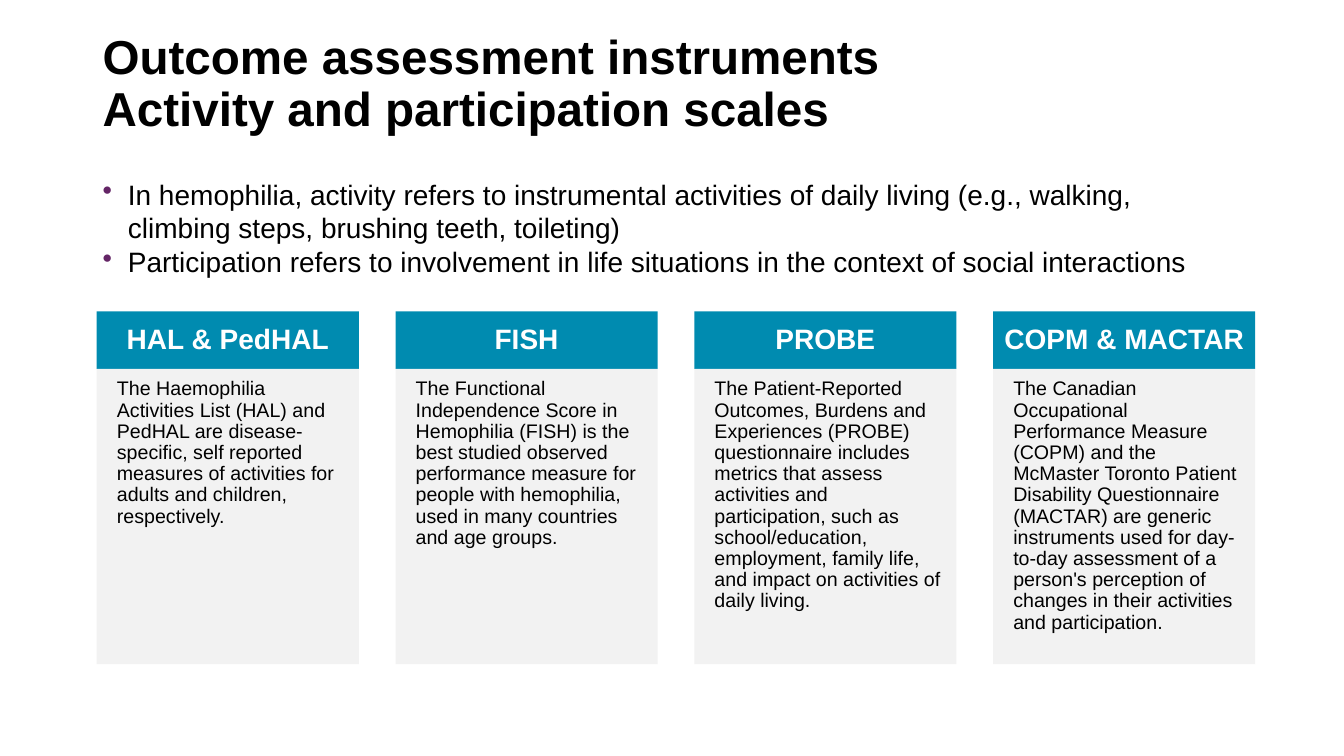
from pptx import Presentation
from pptx.dml.color import RGBColor
from pptx.enum.shapes import MSO_SHAPE
from pptx.enum.text import MSO_ANCHOR, PP_ALIGN
from pptx.oxml import parse_xml
from pptx.oxml.ns import nsdecls
from pptx.util import Inches, Pt

TITLE = "Outcome assessment instruments\nActivity and participation scales"
DEFINITIONS = [
    "In hemophilia, activity refers to instrumental activities of daily living "
    "(e.g., walking, climbing steps, brushing teeth, toileting)",
    "Participation refers to involvement in life situations in the context of "
    "social interactions",
]
SCALES = [
    ("HAL & PedHAL",
     "The Haemophilia Activities List (HAL) and PedHAL are disease-specific, "
     "self reported measures of activities for adults and children, respectively."),
    ("FISH",
     "The Functional Independence Score in Hemophilia (FISH) is the best studied "
     "observed performance measure for people with hemophilia, used in many "
     "countries and age groups."),
    ("PROBE",
     "The Patient-Reported Outcomes, Burdens and Experiences (PROBE) questionnaire "
     "includes metrics that assess activities and participation, such as "
     "school/education, employment, family life, and impact on activities of "
     "daily living."),
    ("COPM & MACTAR",
     "The Canadian Occupational Performance Measure (COPM) and the McMaster Toronto "
     "Patient Disability Questionnaire (MACTAR) are generic instruments used for "
     "day-to-day assessment of a person's perception of changes in their activities "
     "and participation."),
]


def color(hex_text):
    """Turn a hex string into a colour."""
    return RGBColor.from_string(hex_text)


def style(para, size, ink="000000", bold=False):
    """Format every run of a paragraph."""
    for span in para.runs:
        span.font.name = "Arial"
        span.font.size = Pt(size)
        span.font.bold = bold
        span.font.color.rgb = color(ink)


def set_margins(frame, left, top, right, bottom):
    """Set the insets of a text frame in inches."""
    frame.margin_left, frame.margin_top = Inches(left), Inches(top)
    frame.margin_right, frame.margin_bottom = Inches(right), Inches(bottom)


def add_text_box(page, left, top, width, height):
    """Add a wrapping text box and return its frame."""
    box = page.shapes.add_textbox(Inches(left), Inches(top), Inches(width), Inches(height))
    box.text_frame.word_wrap = True
    return box.text_frame


def add_title(page, left, top, width, height):
    """Place the two-line title."""
    frame = add_text_box(page, left, top, width, height)
    frame.vertical_anchor = MSO_ANCHOR.MIDDLE
    para = frame.paragraphs[0]
    para.text = TITLE
    para.line_spacing = 0.9
    style(para, 34, bold=True)


def add_definitions(page, left, top, width, height):
    """Place the bulleted definitions."""
    frame = add_text_box(page, left, top, width, height)
    frame.text = "\n".join(DEFINITIONS)
    for para in frame.paragraphs:
        properties = para._p.get_or_add_pPr()
        properties.set("marL", str(Inches(0.25)))
        properties.set("indent", str(Inches(-0.25)))
        properties.append(parse_xml(
            f'<a:buClr {nsdecls("a")}><a:srgbClr val="642566"/></a:buClr>'))
        properties.append(parse_xml(f'<a:buChar {nsdecls("a")} char="•"/>'))
        style(para, 20)


def add_panel(page, left, top, width, height, fill, text):
    """Add a filled rectangle holding one paragraph and return its frame."""
    panel = page.shapes.add_shape(
        MSO_SHAPE.RECTANGLE, Inches(left), Inches(top), Inches(width), Inches(height))
    panel.shadow.inherit = False
    panel.fill.solid()
    panel.fill.fore_color.rgb = color(fill)
    panel.line.fill.background()
    frame = panel.text_frame
    frame.word_wrap = True
    frame.text = text
    frame.paragraphs[0].line_spacing = 0.9
    return frame


def add_card(page, left, top, width, height, heading, description):
    """Place one scale: a heading bar over its description."""
    bar = 0.57
    frame = add_panel(page, left, top, width, bar, "008BB0", heading)
    set_margins(frame, 0, 0.11, 0, 0.11)
    frame.vertical_anchor = MSO_ANCHOR.MIDDLE
    frame.paragraphs[0].alignment = PP_ALIGN.CENTER
    style(frame.paragraphs[0], 20, "FFFFFF", bold=True)

    frame = add_panel(page, left, top + bar, width, height - bar, "F2F2F2", description)
    set_margins(frame, 0.2, 0.1, 0.14, 0.16)
    frame.vertical_anchor = MSO_ANCHOR.TOP
    frame.paragraphs[0].alignment = PP_ALIGN.LEFT
    style(frame.paragraphs[0], 14)


def add_cards(page, left, top, width, height):
    """Spread the scale cards evenly over the width."""
    card = 2.6
    step = (width - card) / (len(SCALES) - 1)
    for index, (heading, description) in enumerate(SCALES):
        add_card(page, left + index * step, top, card, height, heading, description)


def main():
    """Build the slide and save it."""
    deck = Presentation()
    deck.slide_width, deck.slide_height = Inches(13.33), Inches(7.5)
    page = deck.slides.add_slide(deck.slide_layouts[6])
    add_title(page, 0.92, 0.25, 11.5, 1.19)
    add_definitions(page, 0.92, 1.71, 11.5, 1.42)
    add_cards(page, 0.96, 3.09, 11.49, 3.5)
    deck.save("out.pptx")


if __name__ == "__main__":
    main()
